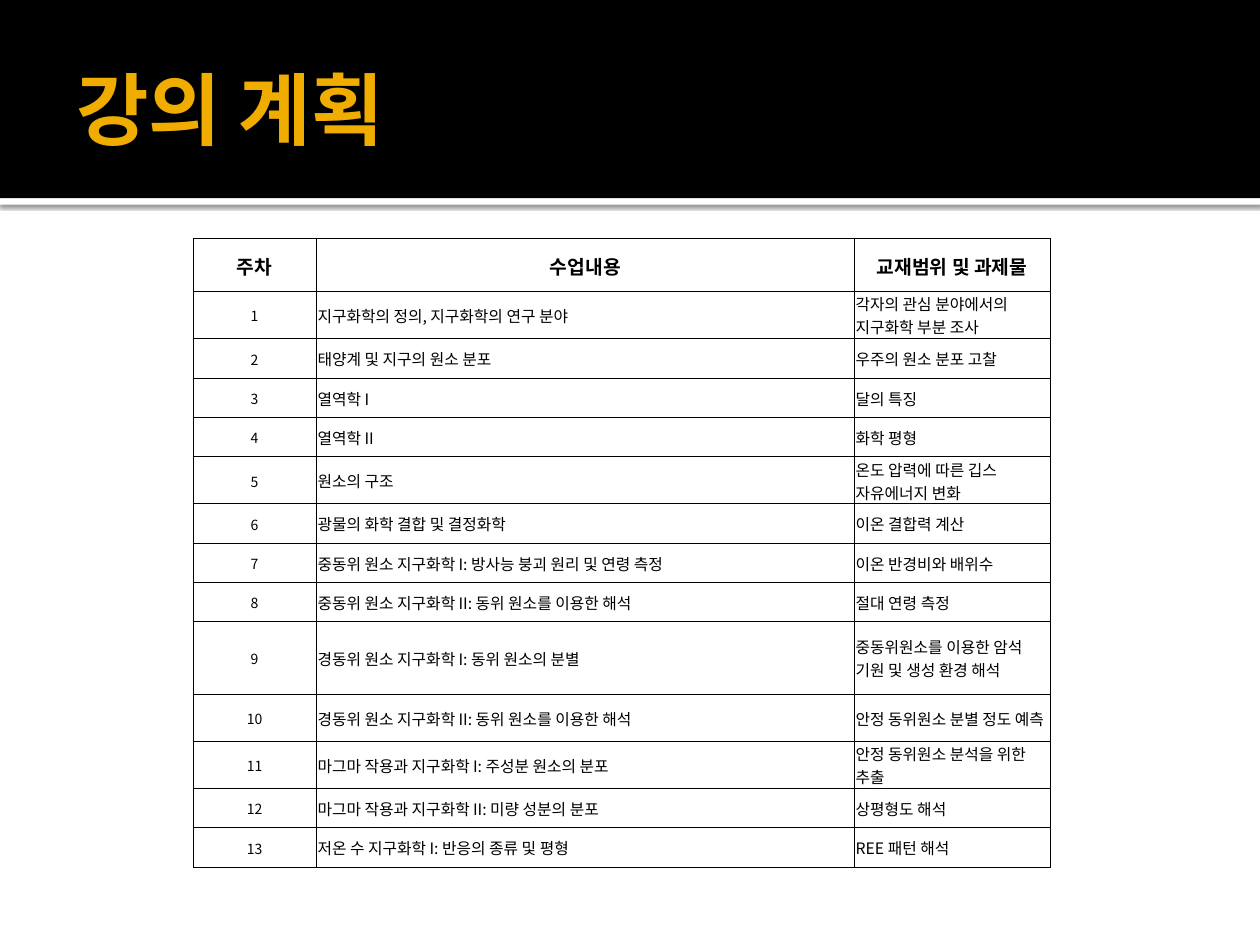
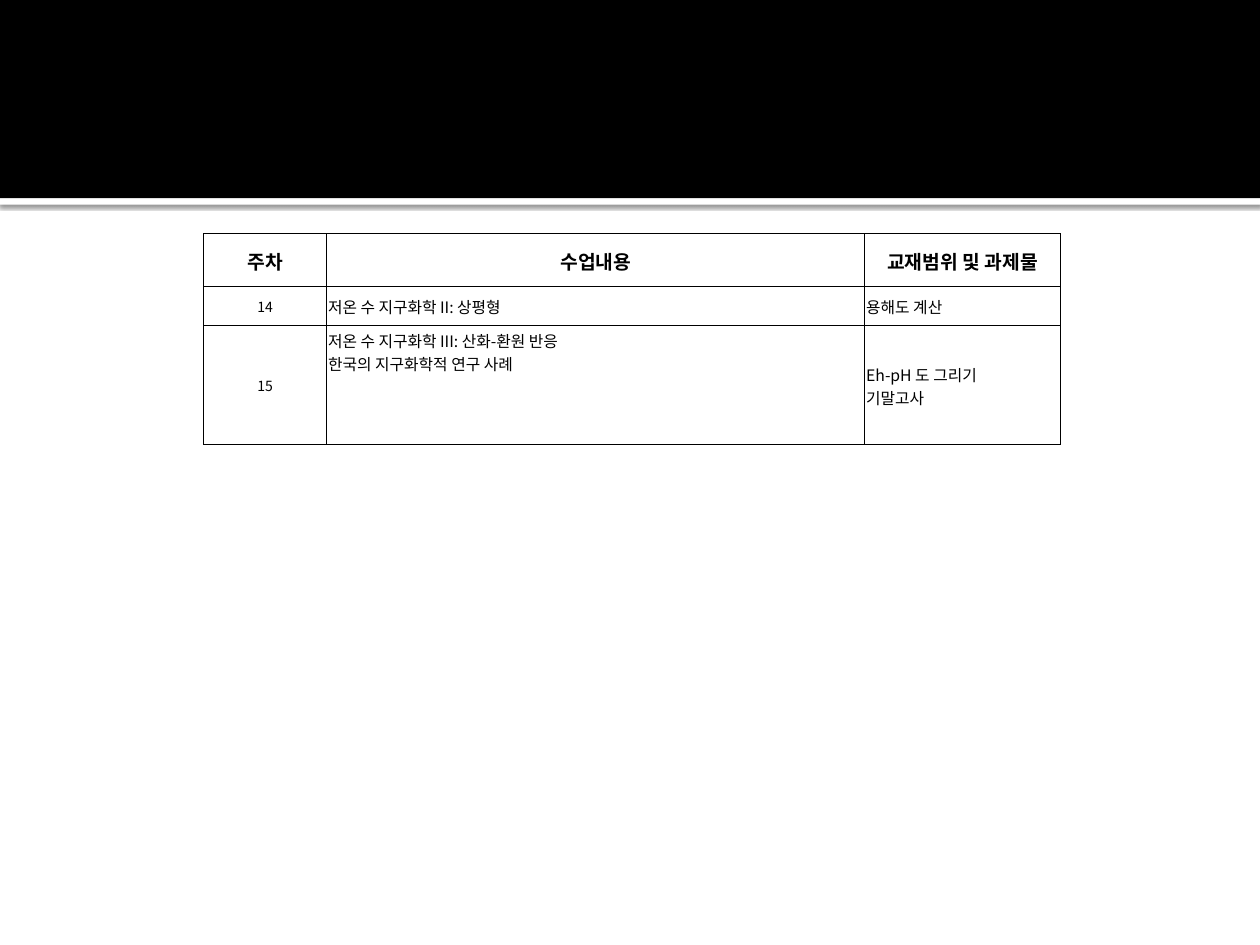
import dataclasses

import lxml.etree
import pptx
import pptx.dml.color
import pptx.enum.shapes
import pptx.enum.text
import pptx.oxml
import pptx.oxml.ns
import pptx.util

PX = 9525
ALIGN = pptx.enum.text.PP_ALIGN
ANCHOR = pptx.enum.text.MSO_ANCHOR


@dataclasses.dataclass(frozen=True)
class Theme:
    black: str = "000000"
    white: str = "FFFFFF"
    gold: str = "F0AD00"
    title_font: str = "Karla"
    body_font: str = "Noto Sans CJK KR"
    title_size: int = 45
    header_size: int = 11
    week_size: int = 8
    body_size: int = 9
    border_width: float = 0.5


THEME = Theme()
HEADER = ("주차", "수업내용", "교재범위 및 과제물")
COLUMNS = (94, 410, 149)
HEADER_HEIGHT, ONE_LINE, TWO_LINES = 40, 30, 36

FIRST_WEEKS = [
    ("지구화학의 정의, 지구화학의 연구 분야", "각자의 관심 분야에서의 지구화학 부분 조사", TWO_LINES),
    ("태양계 및 지구의 원소 분포", "우주의 원소 분포 고찰", ONE_LINE),
    ("열역학 I", "달의 특징", ONE_LINE),
    ("열역학 II", "화학 평형", ONE_LINE),
    ("원소의 구조", "온도 압력에 따른 깁스 자유에너지 변화", TWO_LINES),
    ("광물의 화학 결합 및 결정화학", "이온 결합력 계산", ONE_LINE),
    ("중동위 원소 지구화학 I: 방사능 붕괴 원리 및 연령 측정", "이온 반경비와 배위수", ONE_LINE),
    ("중동위 원소 지구화학 II: 동위 원소를 이용한 해석", "절대 연령 측정", ONE_LINE),
    ("경동위 원소 지구화학 I: 동위 원소의 분별", "중동위원소를 이용한 암석 기원 및 생성 환경 해석", 55),
    ("경동위 원소 지구화학 II: 동위 원소를 이용한 해석", "안정 동위원소 분별 정도 예측", TWO_LINES),
    ("마그마 작용과 지구화학 I: 주성분 원소의 분포", "안정 동위원소 분석을 위한 추출", TWO_LINES),
    ("마그마 작용과 지구화학 II: 미량 성분의 분포", "상평형도 해석", ONE_LINE),
    ("저온 수 지구화학 I: 반응의 종류 및 평형", "REE 패턴 해석", ONE_LINE),
]
LAST_WEEKS = [
    ("저온 수 지구화학 II: 상평형", "용해도 계산", ONE_LINE),
    ("저온 수 지구화학 III: 산화-환원 반응\n한국의 지구화학적 연구 사례", "Eh-pH 도 그리기\n기말고사", 91),
]


def rgb(color):
    return pptx.dml.color.RGBColor.from_string(color)


def write_text(frame, text, *, size, font=THEME.body_font, color=THEME.black,
               bold=False, align=ALIGN.LEFT):
    for index, line in enumerate(text.split("\n")):
        paragraph = frame.add_paragraph() if index else frame.paragraphs[0]
        paragraph.alignment = align
        run = paragraph.add_run()
        run.text = line
        run.font.size = pptx.util.Pt(size)
        run.font.bold = bold
        run.font.color.rgb = rgb(color)
        run.font.name = font
        east_asian = lxml.etree.SubElement(run.font._element, pptx.oxml.ns.qn("a:ea"))
        east_asian.set("typeface", THEME.body_font)


class Deck:
    def __init__(self, theme):
        self.theme = theme
        self.presentation = pptx.Presentation()
        self.presentation.slide_width = 960 * PX
        self.presentation.slide_height = 720 * PX
        self.slide = None

    def add_slide(self):
        self.slide = self.presentation.slides.add_slide(self.presentation.slide_layouts[6])
        self.slide.background.fill.solid()
        self.slide.background.fill.fore_color.rgb = rgb(self.theme.white)
        strip = self.band(151, 5, self.theme.white)
        self.cast_shadow(strip)
        self.band(0, 151, self.theme.black)

    def band(self, top, height, color):
        band = self.slide.shapes.add_shape(
            pptx.enum.shapes.MSO_SHAPE.RECTANGLE, 0, top * PX, 960 * PX, height * PX)
        band.shadow.inherit = False
        band.fill.solid()
        band.fill.fore_color.rgb = rgb(color)
        band.line.fill.background()
        return band

    def cast_shadow(self, shape):
        effects = shape._element.spPr.find(pptx.oxml.ns.qn("a:effectLst"))
        effects.append(pptx.oxml.parse_xml(
            f'<a:outerShdw {pptx.oxml.ns.nsdecls("a")} blurRad="{pptx.util.Pt(2.5)}" '
            f'dist="{pptx.util.Pt(0.8)}" dir="5400000" algn="t" rotWithShape="0">'
            f'<a:srgbClr val="{self.theme.black}"><a:alpha val="60000"/></a:srgbClr>'
            '</a:outerShdw>'))

    def title(self, text):
        frame = self.slide.shapes.add_textbox(48 * PX, 16 * PX, 864 * PX, 132 * PX).text_frame
        frame.word_wrap = True
        frame.vertical_anchor = ANCHOR.MIDDLE
        frame.margin_left = 10 * PX
        frame.margin_right = frame.margin_top = frame.margin_bottom = 5 * PX
        write_text(frame, text, size=self.theme.title_size, font=self.theme.title_font,
                   color=self.theme.gold, bold=True)

    def style_cell(self, cell, anchor, top_margin):
        cell.vertical_anchor = anchor
        cell.margin_left = cell.margin_right = PX
        cell.margin_top = top_margin * PX
        cell.margin_bottom = 0
        properties = cell._tc.get_or_add_tcPr()
        for side in "LRTB":
            properties.append(pptx.oxml.parse_xml(
                f'<a:ln{side} {pptx.oxml.ns.nsdecls("a")} '
                f'w="{pptx.util.Pt(self.theme.border_width)}"><a:solidFill>'
                f'<a:srgbClr val="{self.theme.black}"/></a:solidFill></a:ln{side}>'))
        cell.fill.background()

    def schedule(self, left, top, first_week, weeks):
        heights = [HEADER_HEIGHT] + [height for *_, height in weeks]
        schedule = self.slide.shapes.add_table(
            len(heights), len(COLUMNS), left * PX, top * PX,
            sum(COLUMNS) * PX, sum(heights) * PX).table
        schedule.first_row = schedule.horz_banding = False
        for column, width in zip(schedule.columns, COLUMNS):
            column.width = width * PX
        entries = [HEADER] + [(str(week), lesson, task) for week, (lesson, task, _)
                              in enumerate(weeks, first_week)]
        for row_index, (entry, height) in enumerate(zip(entries, heights)):
            schedule.rows[row_index].height = height * PX
            for column_index, text in enumerate(entry):
                is_header, is_week = row_index == 0, column_index == 0
                long_lesson = column_index == 1 and "\n" in text
                cell = schedule.cell(row_index, column_index)
                self.style_cell(cell, ANCHOR.TOP if long_lesson else ANCHOR.MIDDLE,
                                3 if long_lesson else 1)
                size = self.theme.week_size if is_week else self.theme.body_size
                write_text(cell.text_frame, text, bold=is_header,
                           size=self.theme.header_size if is_header else size,
                           align=ALIGN.CENTER if is_header or is_week else ALIGN.LEFT)


def main():
    deck = Deck(THEME)
    deck.add_slide()
    deck.title("강의 계획")
    deck.schedule(147, 182, 1, FIRST_WEEKS)
    deck.add_slide()
    deck.schedule(155, 178, len(FIRST_WEEKS) + 1, LAST_WEEKS)
    deck.presentation.save("out.pptx")


if __name__ == "__main__":
    main()
